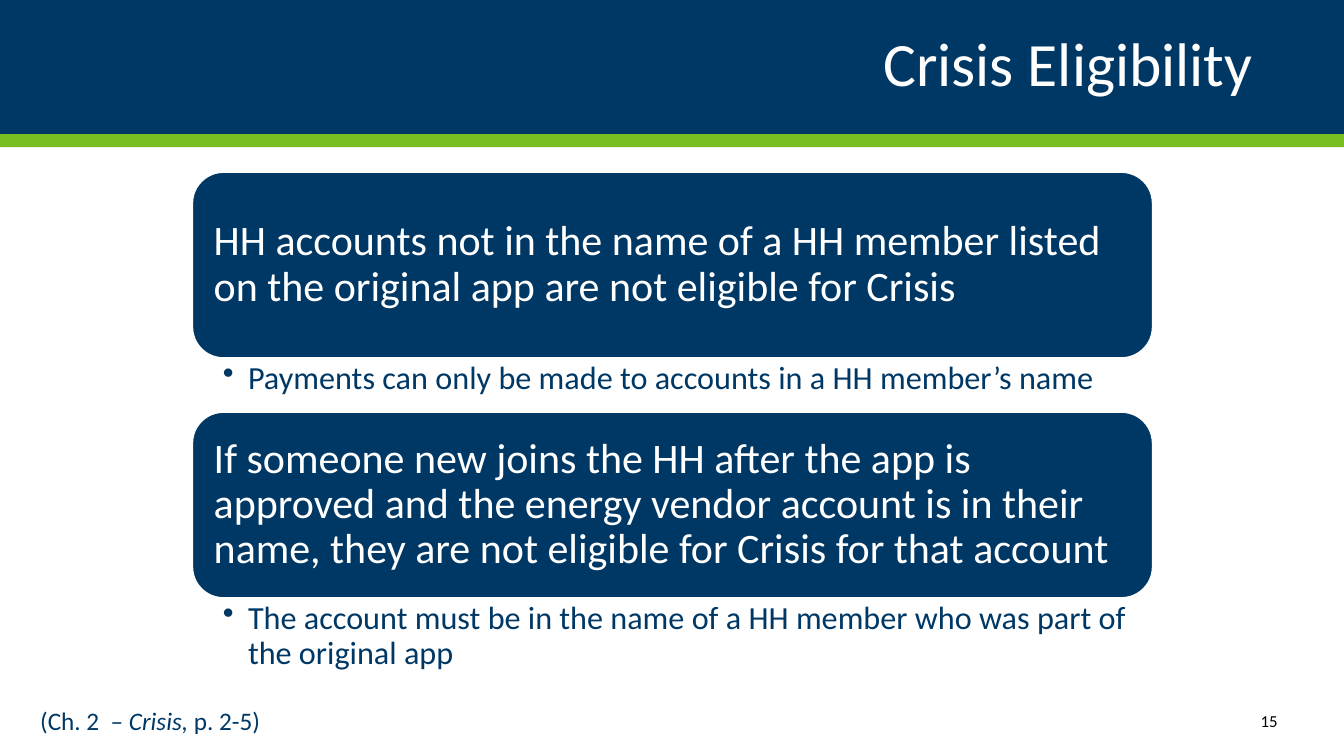
"""Build the Crisis Eligibility slide."""
from lxml.etree import SubElement
from pptx import Presentation
from pptx.dml.color import RGBColor
from pptx.enum.shapes import MSO_SHAPE as Preset
from pptx.enum.text import MSO_ANCHOR as Anchor, PP_ALIGN as Align
from pptx.oxml.ns import qn
from pptx.util import Inches, Pt

NAVY, GREEN, WHITE, BLACK = "003865", "78BE21", "FFFFFF", "000000"
RULES = [
    ("HH accounts not in the name of a HH member listed on the original app "
     "are not eligible for Crisis",
     "Payments can only be made to accounts in a HH member’s name", 1.71, 0.54),
    ("If someone new joins the HH after the app is approved and the energy vendor "
     "account is in their name, they are not eligible for Crisis for that account",
     "The account must be in the name of a HH member who was part of the original app",
     4.09, 0.8),
]
CARD_LEFT, CARD_WIDTH, CARD_HEIGHT = 1.91, 9.52, 1.84


def add_block(left, top, width, height, preset=None, fill=None):
    box = [Inches(length) for length in (left, top, width, height)]
    if preset is None:
        return slide.shapes.add_textbox(*box)
    block = slide.shapes.add_shape(preset, *box)
    block.shadow.inherit = False
    block.fill.solid()
    block.fill.fore_color.rgb = RGBColor.from_string(fill)
    block.line.fill.background()
    return block


def write(block, runs, size, color, align=Align.LEFT, anchor=Anchor.MIDDLE,
          insets=(0.1, 0.05, 0.1, 0.05), spacing=None):
    frame = block.text_frame
    frame.word_wrap = True
    frame.vertical_anchor = anchor
    (frame.margin_left, frame.margin_top,
     frame.margin_right, frame.margin_bottom) = map(Inches, insets)
    paragraph = frame.paragraphs[0]
    paragraph.alignment = align
    paragraph.line_spacing = spacing
    paragraph.font.name = "Calibri"
    paragraph.font.size = Pt(size)
    paragraph.font.color.rgb = RGBColor.from_string(color)
    for text in runs:
        paragraph.add_run().text = text
    return paragraph


deck = Presentation()
deck.slide_width, deck.slide_height = Inches(13.33), Inches(7.5)
slide = deck.slides.add_slide(deck.slide_layouts[6])

add_block(0, 1.33, 13.33, 0.13, Preset.RECTANGLE, GREEN)
title = add_block(0, 0, 13.33, 1.33, Preset.RECTANGLE, NAVY)
write(title, ["Crisis Eligibility"], 44, WHITE, Align.RIGHT,
      insets=(0.9, 0.05, 0.9, 0.05), spacing=0.9)

page_number = add_block(11.17, 6.95, 1.6, 0.4)
write(page_number, ["15"], 12, BLACK, Align.RIGHT)

reference = add_block(0.3, 6.95, 2.41, 0.4)
citation = write(reference, ["(Ch. 2  – ", "Crisis,", " p. 2-5)"], 18, NAVY,
                 anchor=Anchor.TOP)
citation.runs[1].font.italic = True

for rule, detail, top, detail_height in RULES:
    card = add_block(CARD_LEFT, top, CARD_WIDTH, CARD_HEIGHT,
                     Preset.ROUNDED_RECTANGLE, NAVY)
    card.line.color.rgb = RGBColor.from_string(WHITE)
    card.line.width = Pt(0.85)
    write(card, [rule], 30, WHITE, insets=(0.12,) * 4, spacing=0.9)

    note = add_block(CARD_LEFT, top + CARD_HEIGHT, CARD_WIDTH, detail_height)
    bullet = write(note, [detail], 23, NAVY, anchor=Anchor.TOP,
                   insets=(0.3, 0.04, 0.23, 0.04), spacing=0.9)
    properties = bullet._p.get_or_add_pPr()
    properties.set("marL", str(Inches(0.25)))
    properties.set("indent", str(Inches(-0.25)))
    marker = SubElement(properties, qn("a:buChar"), char="•")
    properties.find(qn("a:defRPr")).addprevious(marker)

deck.save("out.pptx")
